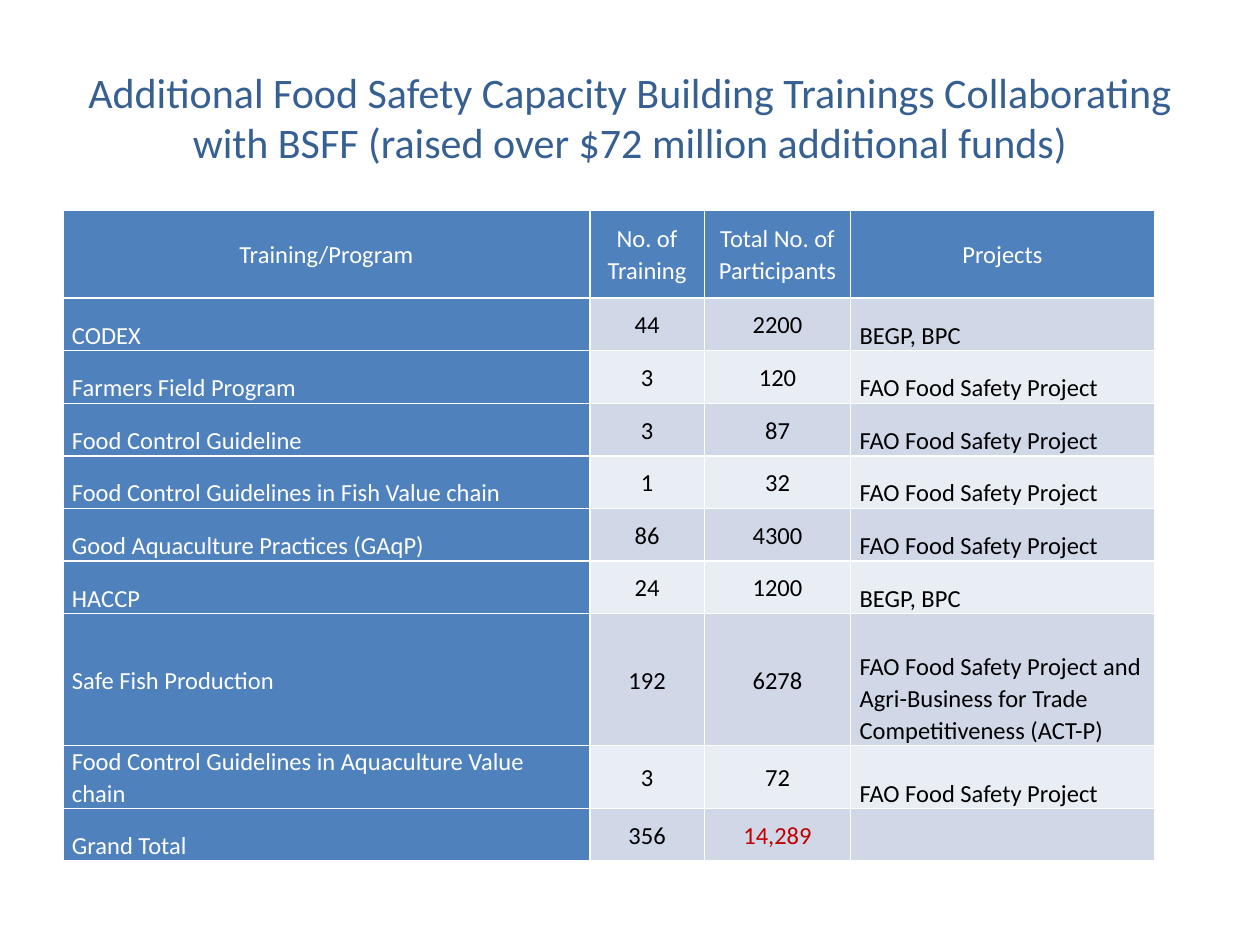
from dataclasses import dataclass

from pptx import Presentation
from pptx.dml.color import RGBColor
from pptx.enum import text
from pptx.util import Cm, Pt

COLORS = {
    "title": "376092",
    "header": "4F81BD",
    "band_dark": "D0D8E8",
    "band_light": "E9EDF4",
    "white": "FFFFFF",
    "black": "000000",
    "highlight": "C00000",
}
FONT = "Calibri"
HEADINGS = ("Training/Program", "No. of Training", "Total No. of Participants", "Projects")
COLUMN_WIDTHS = (10.62, 2.31, 2.95, 6.12)
HEADER_HEIGHT = 1.77
FAO = "FAO Food Safety Project"


@dataclass
class Training:
    name: str
    sessions: str
    participants: str
    projects: str
    height: float = 1.06
    name_anchor: text.MSO_ANCHOR = text.MSO_ANCHOR.BOTTOM
    participants_color: str = "black"


TRAININGS = (
    Training("CODEX", "44", "2200", "BEGP, BPC"),
    Training("Farmers Field Program", "3", "120", FAO),
    Training("Food Control Guideline", "3", "87", FAO),
    Training("Food Control Guidelines in Fish Value chain", "1", "32", FAO),
    Training("Good Aquaculture Practices (GAqP)", "86", "4300", FAO),
    Training("HACCP", "24", "1200", "BEGP, BPC"),
    Training(
        "Safe Fish Production", "192", "6278",
        f"{FAO} and Agri-Business for Trade Competitiveness (ACT-P)",
        height=2.66, name_anchor=text.MSO_ANCHOR.MIDDLE,
    ),
    Training("Food Control Guidelines in Aquaculture Value chain", "3", "72", FAO),
    Training("Grand Total", "356", "14,289", "", participants_color="highlight"),
)


def style_paragraph(paragraph, size: float, color: str, centered: bool) -> None:
    paragraph.alignment = text.PP_ALIGN.CENTER if centered else text.PP_ALIGN.LEFT
    paragraph.font.name = FONT
    paragraph.font.size = Pt(size)
    paragraph.font.bold = False
    paragraph.font.color.rgb = RGBColor.from_string(COLORS[color])


def fill_cell(cell, content: str, fill: str, color: str, centered: bool,
              anchor: text.MSO_ANCHOR = text.MSO_ANCHOR.MIDDLE) -> None:
    cell.fill.solid()
    cell.fill.fore_color.rgb = RGBColor.from_string(COLORS[fill])
    cell.margin_left = cell.margin_right = Cm(0.18)
    cell.margin_top = cell.margin_bottom = Cm(0)
    cell.vertical_anchor = anchor
    cell.text = content
    paragraph = cell.text_frame.paragraphs[0]
    paragraph.line_spacing = 1.07
    style_paragraph(paragraph, 14, color, centered)


def add_title(slide, content: str) -> None:
    shape = slide.shapes.add_textbox(Cm(1.27), Cm(0.76), Cm(22.86), Cm(3.18))
    frame = shape.text_frame
    frame.word_wrap = True
    frame.vertical_anchor = text.MSO_ANCHOR.MIDDLE
    frame.text = content
    style_paragraph(frame.paragraphs[0], 24, "title", True)


def add_training_table(slide) -> None:
    heights = [HEADER_HEIGHT] + [training.height for training in TRAININGS]
    table = slide.shapes.add_table(
        len(heights), len(HEADINGS), Cm(1.27), Cm(4.24),
        Cm(sum(COLUMN_WIDTHS)), Cm(sum(heights)),
    ).table
    table.first_col = True
    for column, width in zip(table.columns, COLUMN_WIDTHS):
        column.width = Cm(width)
    for row, height in zip(table.rows, heights):
        row.height = Cm(height)
    for index, heading in enumerate(HEADINGS):
        fill_cell(table.cell(0, index), heading, "header", "white", True)
    for index, training in enumerate(TRAININGS, start=1):
        band = "band_dark" if index % 2 else "band_light"
        name, sessions, participants, projects = table.rows[index].cells
        fill_cell(name, training.name, "header", "white", False, training.name_anchor)
        fill_cell(sessions, training.sessions, band, "black", True)
        fill_cell(participants, training.participants, band, training.participants_color, True)
        fill_cell(projects, training.projects, band, "black", False, text.MSO_ANCHOR.BOTTOM)


def main() -> None:
    presentation = Presentation()
    presentation.slide_width = Cm(25.4)
    presentation.slide_height = Cm(19.05)
    slide = presentation.slides.add_slide(presentation.slide_layouts[6])
    add_title(
        slide,
        "Additional Food Safety Capacity Building Trainings Collaborating "
        "with BSFF (raised over $72 million additional funds)",
    )
    add_training_table(slide)
    presentation.save("out.pptx")


if __name__ == "__main__":
    main()
